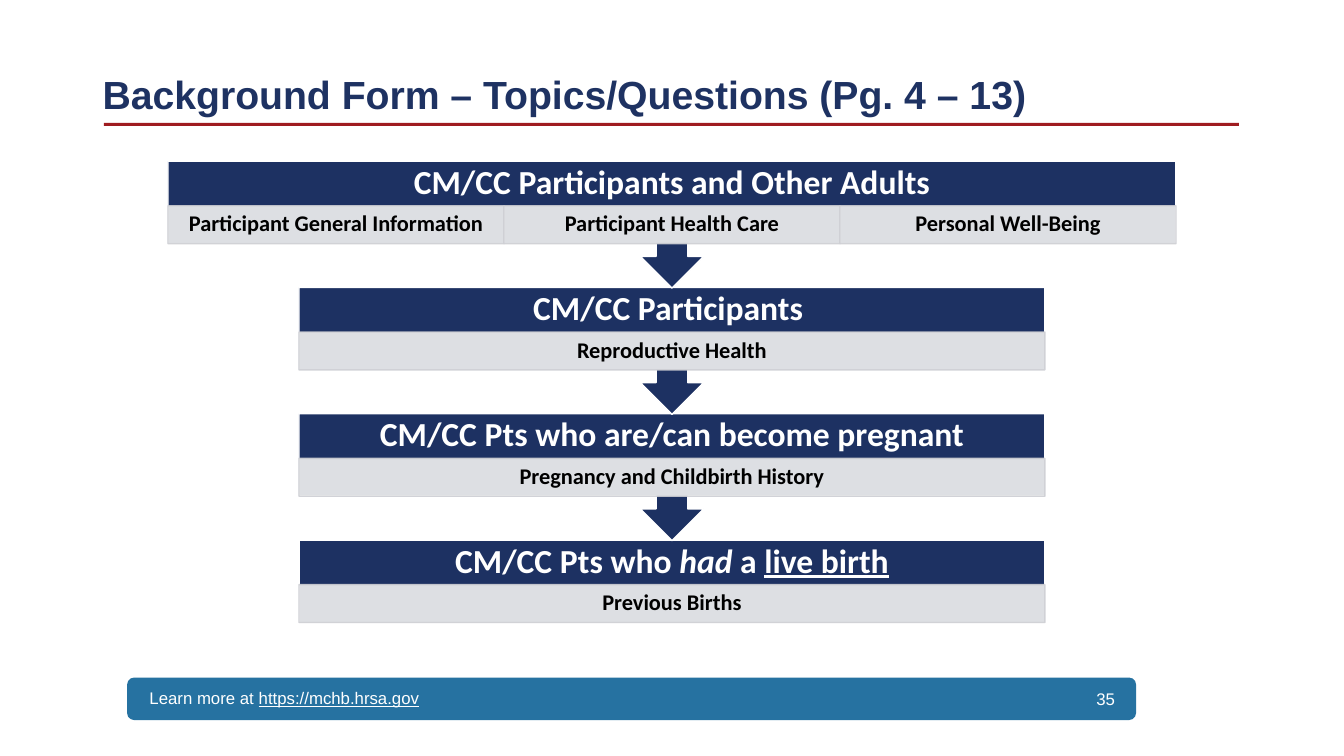
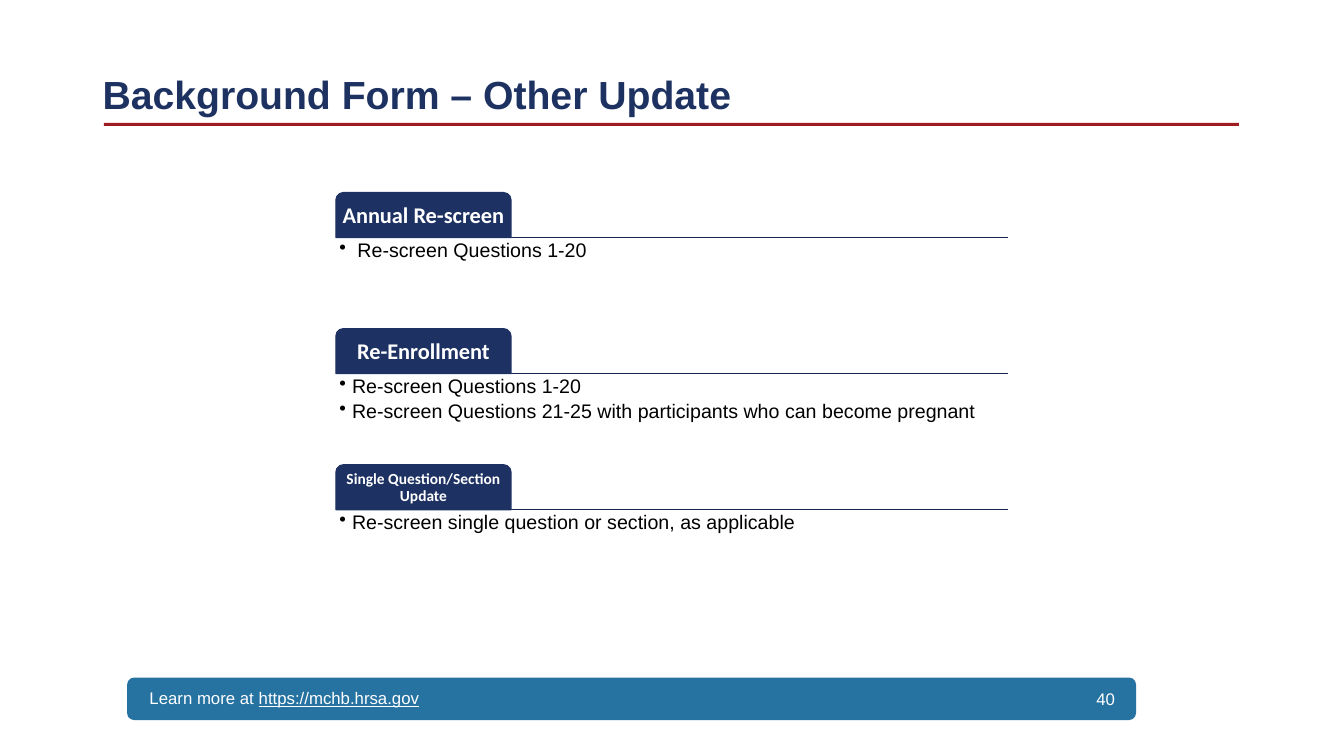
import pptx
import pptx.util
from lxml import etree
from pptx.dml.color import RGBColor
from pptx.enum.shapes import MSO_CONNECTOR, MSO_SHAPE
from pptx.enum.text import MSO_ANCHOR, PP_ALIGN
from pptx.oxml.ns import qn

Pt = pptx.util.Pt

COLORS = {
    "navy": "1D3162", "title": "1E3262", "line": "17274E", "red": "9F1C20",
    "blue": "2672A1", "panel": "F2F2F2", "edge": "CDCED3",
    "white": "FFFFFF", "black": "000000",
}

# Text styles: font, paragraph and frame formats
LEFT, CENTER, RIGHT = PP_ALIGN.LEFT, PP_ALIGN.CENTER, PP_ALIGN.RIGHT
TOP, MIDDLE, BOTTOM = MSO_ANCHOR.TOP, MSO_ANCHOR.MIDDLE, MSO_ANCHOR.BOTTOM


def text_style(name, size, color, align, anchor, bold=False, margins=(7.2, 3.6),
               spacing=0.9, after=0):
    across, down = (Pt(margin) for margin in margins)
    return {
        "color": color,
        "font": {"name": name, "size": Pt(size), "bold": bold},
        "para": {"alignment": align, "line_spacing": spacing, "space_after": Pt(after)},
        "frame": {"word_wrap": True, "vertical_anchor": anchor,
                  "margin_left": across, "margin_right": across,
                  "margin_top": down, "margin_bottom": down},
    }


STYLES = {
    "title": text_style("Arial", 28, "title", LEFT, BOTTOM, bold=True),
    "footer": text_style("Arial", 12, "white", RIGHT, MIDDLE, spacing=1.0),
    "heading": text_style("Calibri", 24, "white", CENTER, MIDDLE, True, (0, 0)),
    "topic": text_style("Calibri", 16, "black", CENTER, MIDDLE, True, (8, 1.5)),
    "tab": text_style("Calibri", 16, "white", CENTER, MIDDLE, True, (1, 1)),
    "small tab": text_style("Calibri", 11, "white", CENTER, MIDDLE, True, (1, 1)),
    "bullets": text_style("Arial", 14, "black", LEFT, TOP, margins=(2.4, 2.4), after=2.5),
}


def set_all(target, values):
    for name, value in values.items():
        setattr(target, name, value)


def rgb(color):
    return RGBColor.from_string(COLORS[color])


class Deck:
    """Holds the presentation, its style and the current slide."""

    def __init__(self):
        self.deck = pptx.Presentation()
        set_all(self.deck, {"slide_width": Pt(960), "slide_height": Pt(540)})
        self.page = None

    def new_page(self, title, number):
        self.page = self.deck.slides.add_slide(self.deck.slide_layouts[6])
        # Footer band
        self.shape(MSO_SHAPE.ROUNDED_RECTANGLE, (90.8, 484, 720.7, 30.4), "blue")
        self.text_box((93, 484, 213.6, 28.8), "footer",
                      [[("Learn more at ", {}),
                        ("https://mchb.hrsa.gov", {"underline": True})]])
        self.text_box((774, 484.8, 29.5, 28.8), "footer", [str(number)])
        # Title and rule
        self.shape(MSO_SHAPE.RECTANGLE, (74.2, 87.8, 810.7, 2.2), "red")
        self.text_box((66.2, 14.4, 828, 73.4), "title", [title])

    def shape(self, kind, at, fill, edge=None, opacity=None):
        shape = self.page.shapes.add_shape(kind, *map(Pt, at))
        shape.shadow.inherit = False
        shape.fill.solid()
        shape.fill.fore_color.rgb = rgb(fill)
        if edge:
            shape.line.color.rgb = rgb(edge)
            shape.line.width = Pt(1)
        else:
            shape.line.fill.background()
        if opacity:
            for color in list(shape._element.spPr.iter(qn("a:srgbClr"))):
                etree.SubElement(color, qn("a:alpha"), val=str(opacity * 1000))
        return shape

    def text_box(self, at, style, paragraphs, bullet=None):
        box = self.page.shapes.add_textbox(*map(Pt, at))
        self.fill_text(box, style, paragraphs, bullet)

    def fill_text(self, box, style, paragraphs, bullet=None):
        """Each paragraph is a string or a list of (text, font values)."""
        formats = STYLES[style]
        frame = box.text_frame
        set_all(frame, formats["frame"])
        for index, content in enumerate(paragraphs):
            para = frame.add_paragraph() if index else frame.paragraphs[0]
            if bullet:
                self.add_bullet(para, bullet)
            set_all(para, formats["para"])
            spans = [(content, {})] if isinstance(content, str) else content
            for text, extra in spans:
                span = para.add_run()
                span.text = text
                set_all(span.font, {**formats["font"], **extra})
                span.font.color.rgb = rgb(formats["color"])

    def add_bullet(self, para, bullet):
        properties = para._p.get_or_add_pPr()
        indent = Pt(9)
        properties.set("marL", str(indent))
        properties.set("indent", str(-indent))
        etree.SubElement(properties, qn("a:buChar"), char=bullet)

    def line(self, left, top, width):
        line = self.page.shapes.add_connector(
            MSO_CONNECTOR.STRAIGHT, *map(Pt, (left, top, left + width, top)))
        line.line.color.rgb = rgb("line")
        line.line.width = Pt(1)
        etree.SubElement(line._element.spPr, qn("a:effectLst"))

    def step(self, top, width, heading, topics, arrow):
        """A heading band over a row of topics, with an arrow to the next step."""
        left = (960 - width) / 2
        kind, height = ((MSO_SHAPE.DOWN_ARROW_CALLOUT, 90.6) if arrow
                        else (MSO_SHAPE.RECTANGLE, 59))
        self.shape(kind, (left, top, width, height), "navy", "white")
        self.text_box((left, top, width, 31.8), "heading", [heading])
        cell = width / len(topics)
        for index, topic in enumerate(topics):
            panel = self.shape(MSO_SHAPE.RECTANGLE,
                               (left + index * cell, top + 31.8, cell, 27.1),
                               "panel", "edge", opacity=90)
            self.fill_text(panel, "topic", [topic])

    def section(self, top, label, style, points):
        """A tab on a line, with bullets below."""
        left, width, tab_height = 240, 480, 32
        self.line(left, top + tab_height, width)
        tab = self.shape(MSO_SHAPE.ROUND_2_SAME_RECTANGLE,
                         (left, top, 125, tab_height), "navy", "navy")
        self.fill_text(tab, style, [label])
        self.text_box((left, top + tab_height, width, 64), "bullets", points, bullet="•")


def main():
    deck = Deck()

    # Flow of topics by participant group; each arrow tip lies over the next band
    deck.new_page("Background Form – Topics/Questions (Pg. 4 – 13)", 35)
    steps = [
        (720, "CM/CC Participants and Other Adults",
         ["Participant General Information", "Participant Health Care",
          "Personal Well-Being"]),
        (532.8, "CM/CC Participants ", ["Reproductive Health"]),
        (532.8, "CM/CC Pts who are/can become pregnant",
         ["Pregnancy and Childbirth History"]),
        (532.8, [("CM/CC Pts who ", {}), ("had", {"italic": True}), (" a ", {}),
                 ("live birth", {"underline": True})], ["Previous Births"]),
    ]
    last = len(steps) - 1
    for index, (width, heading, topics) in reversed(list(enumerate(steps))):
        deck.step(115.2 + index * 90.2, width, heading, topics, arrow=index < last)

    # Kinds of update
    deck.new_page("Background Form – Other Update", 40)
    sections = [
        ("Annual Re-screen", "tab", [" Re-screen Questions 1-20"]),
        ("Re-Enrollment", "tab",
         ["Re-screen Questions 1-20",
          "Re-screen Questions 21-25 with participants who can become pregnant"]),
        ("Single Question/Section Update", "small tab",
         ["Re-screen single question or section, as applicable"]),
    ]
    for index, section in enumerate(sections):
        deck.section(137.6 + index * 97.2, *section)

    deck.deck.save("out.pptx")


if __name__ == "__main__":
    main()
